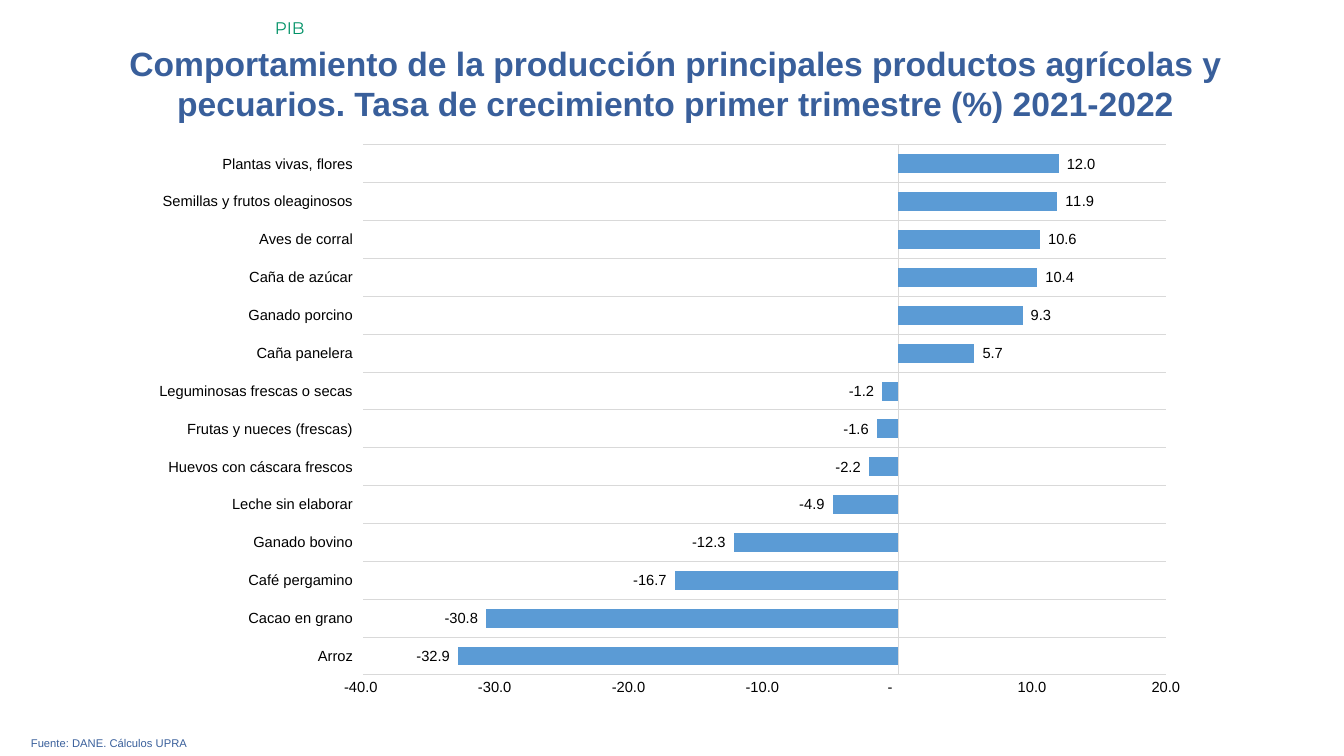
from lxml import etree
from pptx import Presentation
from pptx.chart.data import CategoryChartData
from pptx.dml.color import RGBColor
from pptx.enum.chart import (XL_CHART_TYPE, XL_LABEL_POSITION,
                             XL_TICK_LABEL_POSITION, XL_TICK_MARK)
from pptx.enum.text import PP_ALIGN
from pptx.oxml.ns import qn
from pptx.util import Pt

LEFT, CENTER, JUSTIFY = PP_ALIGN.LEFT, PP_ALIGN.CENTER, PP_ALIGN.JUSTIFY
BAR = XL_CHART_TYPE.BAR_CLUSTERED
OUT_END = XL_LABEL_POSITION.OUTSIDE_END
LOW = XL_TICK_LABEL_POSITION.LOW
NO_TICK = XL_TICK_MARK.NONE

PX = 914400 / 100.8
NAVY, GREEN, BLUE, GRAY, BLACK = "395F9B", "009267", "5B9BD5", "D9D9D9", "000000"

TITLE = ("Comportamiento de la producción principales productos agrícolas y "
         "pecuarios. Tasa de crecimiento primer trimestre (%) 2021-2022")
SOURCE = "Fuente: DANE. Cálculos UPRA"
TOPIC = "PIB"
GROWTH = [
    ("Arroz", -32.9),
    ("Cacao en grano", -30.8),
    ("Café pergamino", -16.7),
    ("Ganado bovino", -12.3),
    ("Leche sin elaborar", -4.9),
    ("Huevos con cáscara frescos", -2.2),
    ("Frutas y nueces (frescas)", -1.6),
    ("Leguminosas frescas o secas", -1.2),
    ("Caña panelera", 5.7),
    ("Ganado porcino", 9.3),
    ("Caña de azúcar", 10.4),
    ("Aves de corral", 10.6),
    ("Semillas y frutos oleaginosos", 11.9),
    ("Plantas vivas, flores", 12.0),
]
NUMBER = '_-* #,##0.0_-;\\-* #,##0.0_-;_-* "-"??_-;'
FRAME = (138, 134, 1067, 573)
PLOT = (363, 145, 803, 530)


def px(*lengths):
    return [round(n * PX) for n in lengths]


def color(code):
    return RGBColor.from_string(code)


def style(font, size, tint, face="Arial", bold=False):
    font.size, font.name, font.bold = Pt(size), face, bold
    font.color.rgb = color(tint)


def add_text(slide, box, text, align=LEFT, **look):
    frame = slide.shapes.add_textbox(*px(*box)).text_frame
    frame.word_wrap = True
    line = frame.paragraphs[0]
    line.alignment = align
    run = line.add_run()
    run.text = text
    style(run.font, **look)


def rule(line):
    line.color.rgb = color(GRAY)
    line.width = Pt(0.75)


def place_plot(chart):
    """Fix the inner plot area as fractions of the chart frame."""
    area = chart.plots[0]._element.getparent()
    for old in area.findall(qn("c:layout")):
        area.remove(old)
    layout = etree.Element(qn("c:layout"))
    manual = etree.SubElement(layout, qn("c:manualLayout"))
    left, top, width, height = FRAME
    x, y, w, h = PLOT
    parts = [("layoutTarget", "inner"), ("xMode", "edge"), ("yMode", "edge"),
             ("x", (x - left) / width), ("y", (y - top) / height),
             ("w", w / width), ("h", h / height)]
    for tag, value in parts:
        etree.SubElement(manual, qn("c:" + tag)).set("val", str(value))
    area.insert(0, layout)


def add_growth(slide):
    data = CategoryChartData(number_format="0.0")
    data.categories = [name for name, _ in GROWTH]
    data.add_series("Series 1", [rate for _, rate in GROWTH])
    chart = slide.shapes.add_chart(BAR, *px(*FRAME), data).chart
    chart.has_legend = chart.has_title = False
    style(chart.font, 10.5, BLACK)
    place_plot(chart)

    names, rates = chart.category_axis, chart.value_axis
    for axis in (names, rates):
        axis.major_tick_mark = axis.minor_tick_mark = NO_TICK
        style(axis.tick_labels.font, 10.5, BLACK)
    names.tick_label_position = LOW
    names.has_major_gridlines = True
    rule(names.format.line)
    rule(names.major_gridlines.format.line)
    rates.has_major_gridlines = False
    rates.minimum_scale, rates.maximum_scale, rates.major_unit = -40, 20, 10
    rates.format.line.fill.background()

    plot = chart.plots[0]
    plot.gap_width = 100
    plot.vary_by_categories = False
    bars = plot.series[0]
    bars.invert_if_negative = False
    bars.format.fill.solid()
    bars.format.fill.fore_color.rgb = color(BLUE)
    labels = bars.data_labels
    labels.show_value = True
    labels.position = OUT_END
    style(labels.font, 10.5, BLACK)
    for target in (labels, rates.tick_labels):
        target.number_format = NUMBER
        target.number_format_is_linked = False


def main():
    deck = Presentation()
    deck.slide_width, deck.slide_height = px(1344, 756)
    slide = deck.slides.add_slide(deck.slide_layouts[6])
    add_text(slide, (45, 38, 1261, 92), TITLE, CENTER,
             size=24, tint=NAVY, bold=True)
    add_text(slide, (21, 731, 1301, 24), SOURCE, JUSTIFY, size=8, tint=NAVY)
    add_text(slide, (265, 13, 1079, 30), TOPIC,
             size=12, tint=GREEN, face="Montserrat")
    add_growth(slide)
    deck.save("out.pptx")


if __name__ == "__main__":
    main()
